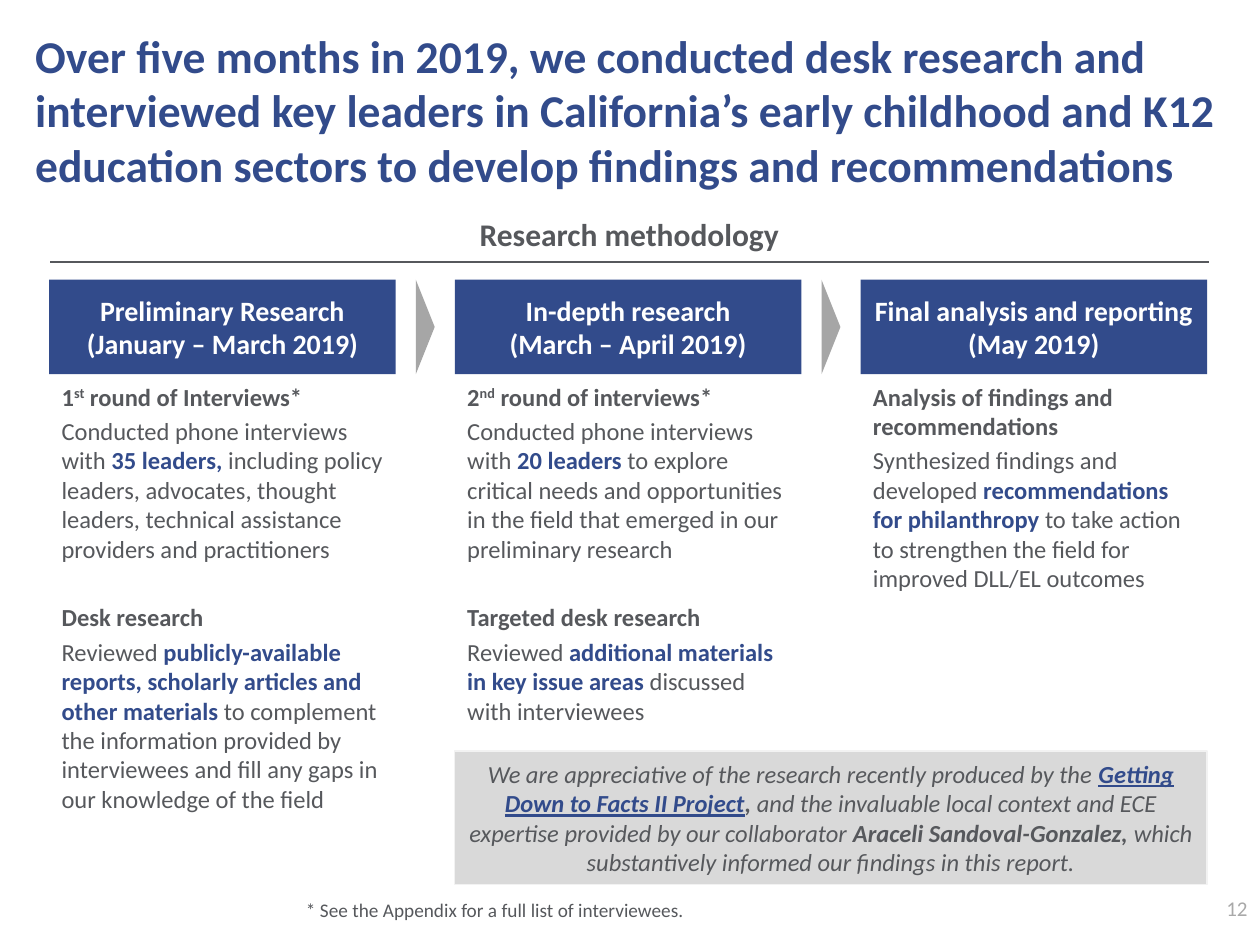
from lxml import etree
from pptx import Presentation
from pptx.dml.color import RGBColor
from pptx.enum.shapes import MSO_SHAPE
from pptx.enum.text import MSO_ANCHOR, PP_ALIGN
from pptx.oxml.ns import qn
from pptx.util import Inches, Pt

RECTANGLE, TRIANGLE = MSO_SHAPE.RECTANGLE, MSO_SHAPE.ISOSCELES_TRIANGLE
LEFT, CENTER, RIGHT = PP_ALIGN.LEFT, PP_ALIGN.CENTER, PP_ALIGN.RIGHT
TOP, MIDDLE = MSO_ANCHOR.TOP, MSO_ANCHOR.MIDDLE

FONT = "Calibri"
BLUE, GRAY, WHITE = "324B8B", "56585C", "FFFFFF"
ARROW_GRAY, NOTE_FILL, NOTE_LINE, NUMBER_GRAY = "A6A6A6", "D9D9D9", "F2F2F2", "A9A9A9"

BOLD = {"bold": True}
ACCENT = {"bold": True, "color": BLUE}
SUPERSCRIPT = {"bold": True, "baseline": 30000}
ITALIC = {"italic": True}
BOLD_ITALIC = {"italic": True, "bold": True}
PROJECT = {"italic": True, "bold": True, "underline": True, "color": BLUE}

COLUMN_LEFT, COLUMN_WIDTH, COLUMN_STEP = 0.39, 2.75, 3.22
HEADER_TOP, HEADER_HEIGHT, ARROW_DEPTH = 2.22, 0.75, 0.15
BODY_TOP = 2.98
HEADING_GAP, LINE_GAP = 22.5, 2.8

PHASES = [
    (
        ["Preliminary Research", "(January – March 2019)"],
        [
            [("1", BOLD), ("st", SUPERSCRIPT), (" round of Interviews*", BOLD)],
            [("Conducted phone interviews with ", {}), ("35 leaders, ", ACCENT),
             ("including policy leaders, advocates, thought leaders, technical "
              "assistance providers and practitioners", {})],
            [("Desk research", BOLD)],
            [("Reviewed ", {}),
             ("publicly-available reports, scholarly articles and other materials ", ACCENT),
             ("to complement the information provided by interviewees and fill any "
              "gaps in our knowledge of the field", {})],
        ],
        3.59,
    ),
    (
        ["In-depth research", "(March – April 2019)"],
        [
            [("2", BOLD), ("nd", SUPERSCRIPT), (" round of interviews*", BOLD)],
            [("Conducted phone interviews with ", {}), ("20 leaders ", ACCENT),
             ("to explore critical needs and opportunities in the field that emerged "
              "in our preliminary research", {})],
            [("Targeted desk research", BOLD)],
            [("Reviewed ", {}), ("additional materials in key issue areas ", ACCENT),
             ("discussed with interviewees", {})],
        ],
        2.88,
    ),
    (
        ["Final analysis and reporting", "(May 2019)"],
        [
            [("Analysis of findings and recommendations", BOLD)],
            [("Synthesized findings and developed ", {}),
             ("recommendations for philanthropy ", ACCENT),
             ("to take action to strengthen the field for improved DLL/EL outcomes", {})],
        ],
        1.8,
    ),
]

NOTE = [
    ("We are appreciative of the research recently produced by the ", ITALIC),
    ("Getting Down to Facts II Project", PROJECT),
    (", ", BOLD_ITALIC),
    ("and the invaluable local context and ECE expertise provided by our collaborator ", ITALIC),
    ("Araceli Sandoval-Gonzalez, ", BOLD_ITALIC),
    ("which substantively informed our findings in this report.", ITALIC),
]


def rgb(value):
    return RGBColor.from_string(value)


def format_run(run, size, color=GRAY, bold=False, italic=False, underline=False, baseline=0):
    font = run.font
    font.name, font.size = FONT, Pt(size)
    font.bold, font.italic, font.underline = bold, italic, underline
    font.color.rgb = rgb(color)
    if baseline:
        run._r.get_or_add_rPr().set("baseline", str(baseline))


def write_paragraphs(text_frame, paragraphs, size, align=LEFT):
    for index, runs in enumerate(paragraphs):
        paragraph = text_frame.paragraphs[0] if index == 0 else text_frame.add_paragraph()
        paragraph.alignment = align
        for text, style in runs:
            run = paragraph.add_run()
            run.text = text
            format_run(run, size, **style)


def add_text(slide, box, paragraphs, size, align=LEFT, anchor=TOP):
    shape = slide.shapes.add_textbox(*map(Inches, box))
    text_frame = shape.text_frame
    text_frame.word_wrap = True
    text_frame.vertical_anchor = anchor
    write_paragraphs(text_frame, paragraphs, size, align)
    return text_frame


def add_block(slide, kind, box, fill, line=None):
    shape = slide.shapes.add_shape(kind, *map(Inches, box))
    shape.shadow.inherit = False
    shape.fill.solid()
    shape.fill.fore_color.rgb = rgb(fill)
    if line:
        shape.line.color.rgb = rgb(line)
        shape.line.width = Pt(0.75)
    else:
        shape.line.fill.background()
    shape.text_frame.word_wrap = True
    shape.text_frame.vertical_anchor = MIDDLE
    return shape


def add_title(slide, text):
    text_frame = add_text(slide, (0.28, 0.22, 9.43, 1.32), [[(text, ACCENT)]], 26)
    text_frame.margin_left = text_frame.margin_right = 0
    text_frame.margin_top = text_frame.margin_bottom = 0


def add_section_heading(slide, text):
    box = (COLUMN_LEFT, 1.67, 9.21, 0.41)
    table = slide.shapes.add_table(1, 1, *map(Inches, box)).table
    table.first_row = table.horz_banding = False
    cell = table.cell(0, 0)
    cell.fill.background()
    write_paragraphs(cell.text_frame, [[(text, BOLD)]], 18, CENTER)
    border = etree.Element(qn("a:lnB"), w=str(Pt(1)))
    solid = etree.SubElement(border, qn("a:solidFill"))
    etree.SubElement(solid, qn("a:srgbClr"), val=GRAY)
    cell._tc.get_or_add_tcPr().insert(0, border)


def add_phase(slide, left, header, body, body_height):
    box = (left, HEADER_TOP, COLUMN_WIDTH, HEADER_HEIGHT)
    shape = add_block(slide, RECTANGLE, box, BLUE)
    lines = [[(line, {"bold": True, "color": WHITE})] for line in header]
    write_paragraphs(shape.text_frame, lines, 16, CENTER)

    text_frame = add_text(slide, (left, BODY_TOP, COLUMN_WIDTH, body_height), body, 14)
    for index, paragraph in enumerate(text_frame.paragraphs[1:], 1):
        paragraph.space_before = Pt(LINE_GAP if index % 2 else HEADING_GAP)


def add_arrow(slide, column_left):
    center_x = column_left + (COLUMN_WIDTH + COLUMN_STEP) / 2
    center_y = HEADER_TOP + HEADER_HEIGHT / 2
    box = (center_x - HEADER_HEIGHT / 2, center_y - ARROW_DEPTH / 2, HEADER_HEIGHT, ARROW_DEPTH)
    add_block(slide, TRIANGLE, box, ARROW_GRAY).rotation = 90


def main():
    presentation = Presentation()
    presentation.slide_width, presentation.slide_height = Inches(10), Inches(7.5)
    slide = presentation.slides.add_slide(presentation.slide_layouts[6])

    add_title(slide, "Over five months in 2019, we conducted desk research and interviewed "
                     "key leaders in California’s early childhood and K12 education sectors "
                     "to develop findings and recommendations")
    add_section_heading(slide, "Research methodology")

    for index, phase in enumerate(PHASES):
        left = COLUMN_LEFT + index * COLUMN_STEP
        add_phase(slide, left, *phase)
        if index < len(PHASES) - 1:
            add_arrow(slide, left)

    note_box = (COLUMN_LEFT + COLUMN_STEP, 5.96, COLUMN_STEP + COLUMN_WIDTH, 1.06)
    note = add_block(slide, RECTANGLE, note_box, NOTE_FILL, NOTE_LINE)
    write_paragraphs(note.text_frame, [NOTE], 14, CENTER)

    footnote = "* See the Appendix for a full list of interviewees."
    add_text(slide, (2.33, 7.08, 7.18, 0.29), [[(footnote, {})]], 11)
    add_text(slide, (9.33, 7.06, 0.67, 0.3), [[("12", {"color": NUMBER_GRAY})]], 12, RIGHT, MIDDLE)

    presentation.save("out.pptx")


if __name__ == "__main__":
    main()
